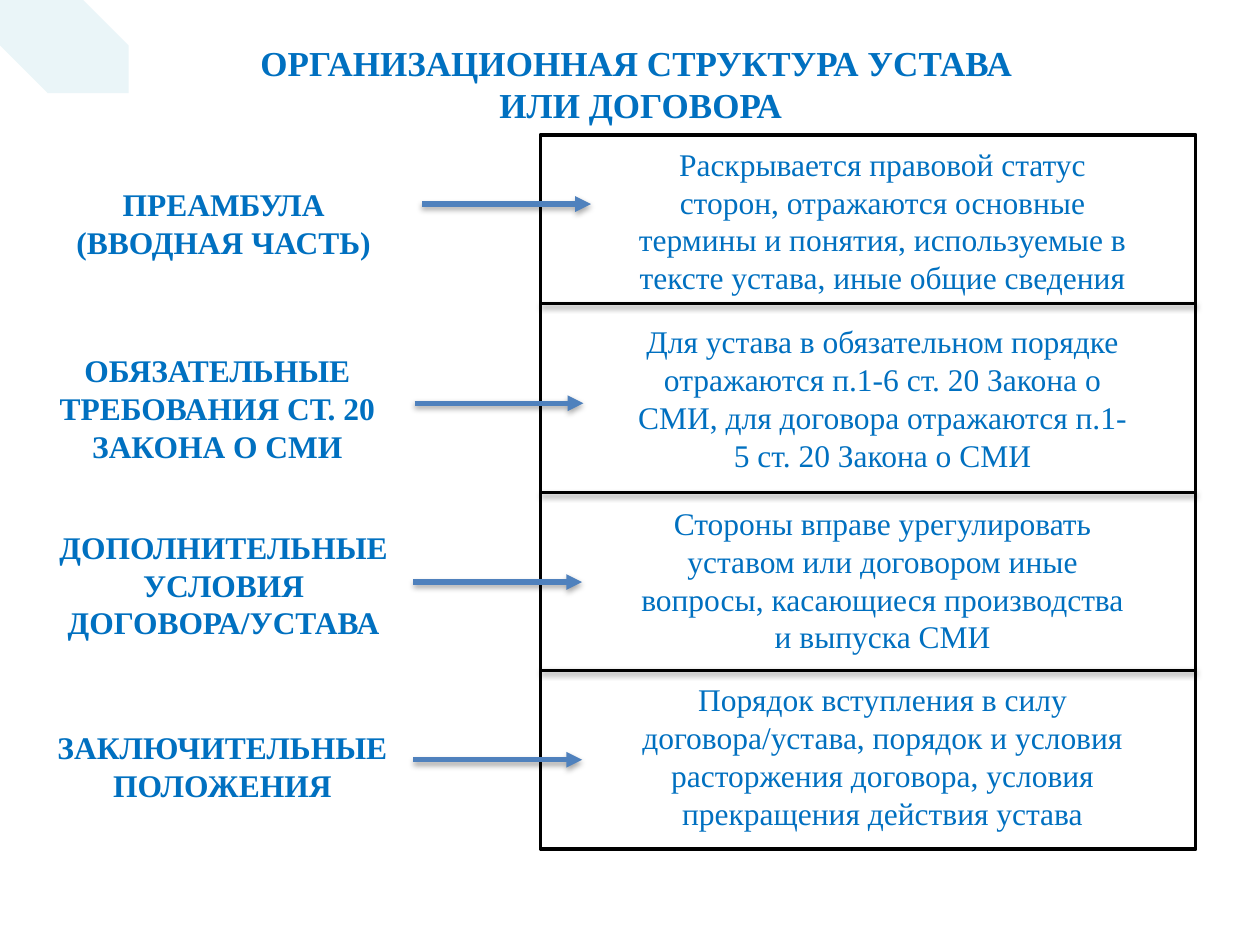
from lxml.etree import SubElement as Sub
from pptx import Presentation as Deck
from pptx.dml.color import RGBColor as Rgb
from pptx.enum.shapes import MSO_CONNECTOR as Link, MSO_SHAPE as Form
from pptx.enum.text import MSO_ANCHOR as Anchor, PP_ALIGN as Align
from pptx.oxml.ns import qn
from pptx.util import Inches, Pt

HUES = {"text": "0070C0", "pale": "B7DEE8", "arrow": "4F81BD",
        "ink": "000000", "paper": "FFFFFF"}

TITLE = ["ОРГАНИЗАЦИОННАЯ СТРУКТУРА УСТАВА ", "ИЛИ ДОГОВОРА"]

ROWS = [
    ((0.23, 1.42, 0.71), "ПРЕАМБУЛА (ВВОДНАЯ ЧАСТЬ)", (3.35, 1.62), 1.1,
     "Раскрывается правовой статус сторон, отражаются основные термины и "
     "понятия, используемые в тексте устава, иные общие сведения"),
    ((0.18, 2.74, 1.01), "ОБЯЗАТЕЛЬНЫЕ ТРЕБОВАНИЯ СТ. 20 ЗАКОНА О СМИ",
     (3.29, 3.2), 2.51,
     "Для устава в обязательном порядке отражаются п.1-6 ст. 20 Закона о "
     "СМИ, для договора отражаются п.1-5 ст. 20 Закона о СМИ"),
    ((0.23, 4.14, 1.01), "ДОПОЛНИТЕЛЬНЫЕ УСЛОВИЯ ДОГОВОРА/УСТАВА",
     (3.28, 4.62), 3.95,
     "Стороны вправе урегулировать уставом или договором иные вопросы, "
     "касающиеся производства и выпуска СМИ"),
    ((0.22, 5.73, 0.71), "ЗАКЛЮЧИТЕЛЬНЫЕ ПОЛОЖЕНИЯ", (3.28, 6.03), 5.35,
     "Порядок вступления в силу договора/устава, порядок и условия "
     "расторжения договора, условия прекращения действия устава"),
]


class Page:
    """Holds the style and the current slide."""

    def __init__(self, deck, font="Times New Roman"):
        self.slide = deck.slides.add_slide(deck.slide_layouts[5])
        self.shapes = self.slide.shapes
        self.font = font

    def hue(self, name):
        return Rgb.from_string(HUES[name])

    def fill_text(self, box, lines, size, bold):
        frame = box.text_frame
        frame.word_wrap = True
        frame.vertical_anchor = Anchor.TOP
        frame.text = "\n".join(lines)
        for para in frame.paragraphs:
            para.alignment = Align.CENTER
            font = para.font
            font.name, font.size, font.bold = self.font, Pt(size), bold
            font.color.rgb = self.hue("text")

    def title(self, lines, left, top, width, height):
        box = self.shapes.title
        box.left, box.top = Inches(left), Inches(top)
        box.width, box.height = Inches(width), Inches(height)
        self.fill_text(box, lines, 20, True)

    def text(self, line, left, top, width, height, bold=False):
        box = self.shapes.add_textbox(*map(Inches, (left, top, width, height)))
        self.fill_text(box, [line], 18, bold)

    def shape(self, form, left, top, width, height, fill, edge=None):
        item = self.shapes.add_shape(
            form, *map(Inches, (left, top, width, height)))
        item.shadow.inherit = False
        item.fill.solid()
        item.fill.fore_color.rgb = self.hue(fill)
        if edge:
            item.line.color.rgb = self.hue(edge)
            item.line.width = Pt(2)
        else:
            item.line.fill.background()
        return item

    def corner(self):
        item = self.shape(Form.SNIP_2_DIAG_RECTANGLE, 0, -0.02, 1.02, 0.76, "pale")
        item.adjustments[0], item.adjustments[1] = 0, 0.5
        tone = item.element.spPr.find(qn("a:solidFill")).find(qn("a:srgbClr"))
        Sub(tone, qn("a:alpha"), val="29000")

    def line(self, left, right, y, hue, width, drop, alpha, head=False):
        item = self.shapes.add_connector(
            Link.STRAIGHT, *map(Inches, (left, y, right, y)))
        item.line.color.rgb = self.hue(hue)
        item.line.width = Pt(width)
        props = item.element.spPr
        if head:
            Sub(props.find(qn("a:ln")), qn("a:tailEnd"), type="triangle")
        glow = Sub(props, qn("a:effectLst"))
        shade = Sub(glow, qn("a:outerShdw"), blurRad="40000", dist=str(drop),
                    dir="5400000", rotWithShape="0")
        tone = Sub(shade, qn("a:srgbClr"), val=HUES["ink"])
        Sub(tone, qn("a:alpha"), val=str(alpha * 1000))


def main():
    deck = Deck()
    deck.slide_width, deck.slide_height = Inches(10), Inches(7.5)
    page = Page(deck)
    page.corner()
    page.title(TITLE, 0.99, 0.28, 8.19, 0.77)
    left, width = 4.29, 5.2
    page.shape(Form.RECTANGLE, left, 1.07, width, 5.67, "paper", "ink")
    for y in (2.41, 3.91, 5.32):
        page.line(left, left + width, y, "ink", 2, 20000, 38)
    for (x, y, high), name, (start, level), top, note in ROWS:
        page.line(start, start + 1.34, level, "arrow", 3, 23000, 35, head=True)
        page.text(name, x, y, 3.09, high, bold=True)
        page.text(note, 4.92, top, 4.17, 1.31)
    deck.save("out.pptx")


if __name__ == "__main__":
    main()
